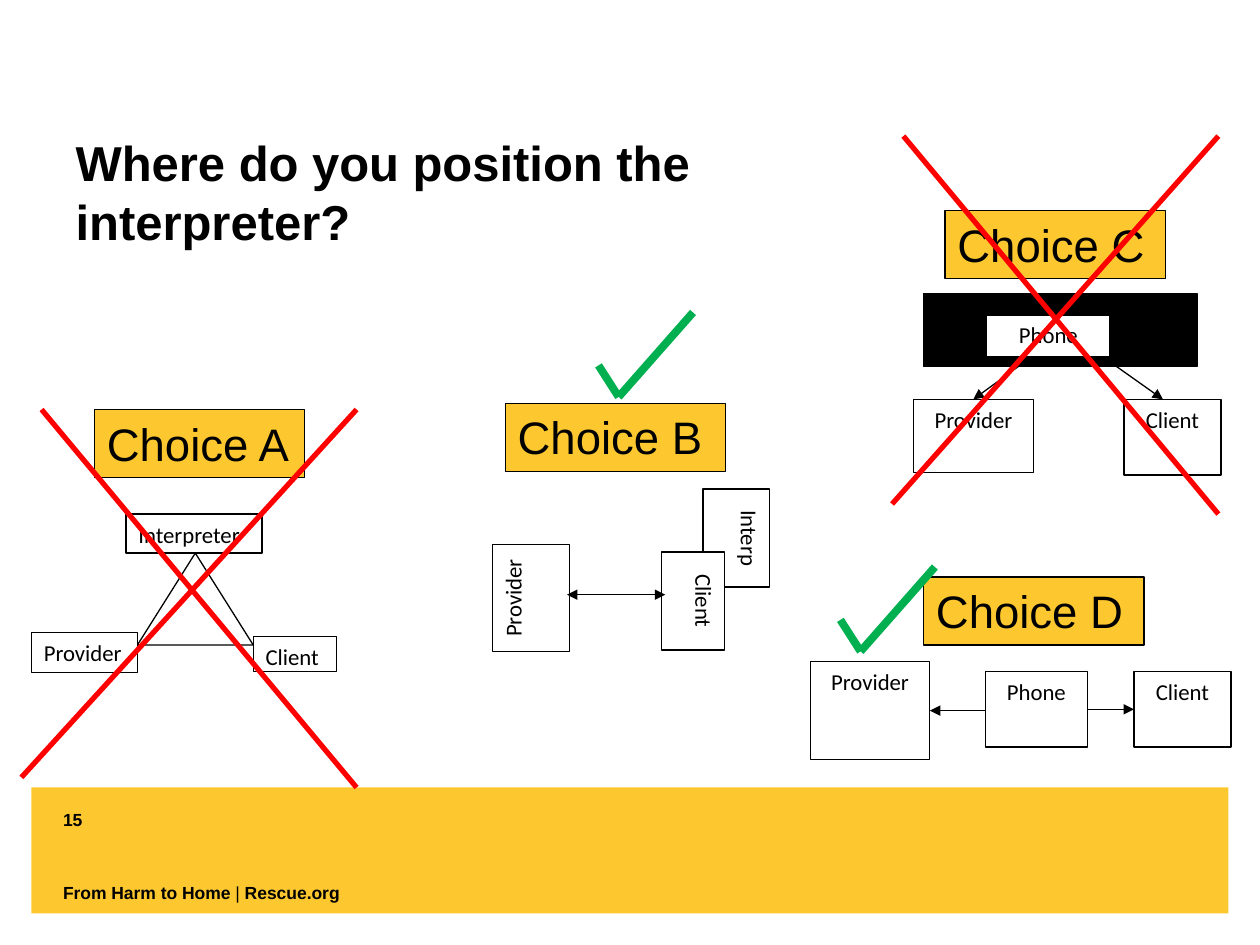
from dataclasses import dataclass
from typing import Optional

from lxml import etree
from pptx import Presentation
from pptx.dml import color
from pptx.enum import shapes, text
from pptx.oxml import ns
from pptx.util import Inches, Pt


@dataclass(frozen=True)
class Theme:
    black: str = "000000"
    white: str = "FFFFFF"
    gold: str = "FDC82F"
    red: str = "FF0000"
    green: str = "00B050"
    head: str = "Arial"
    body: str = "Calibri"
    title: float = 28
    label: float = 26
    role: float = 13
    foot: float = 10
    thin: float = 0.75
    cross: float = 3
    tick: float = 4.5


@dataclass(frozen=True)
class Box:
    words: str
    x: float
    y: float
    w: float
    h: float
    mid: bool = True
    turn: Optional[str] = None
    fill: str = Theme.white


@dataclass(frozen=True)
class Line:
    x1: float
    y1: float
    x2: float
    y2: float


T = Theme()
SHAPE = shapes.MSO_SHAPE


def rgb(code: str) -> color.RGBColor:
    return color.RGBColor.from_string(code)


def write(frame, *parts: str, size: float, font: str, bold: tuple = (False,),
          align=text.PP_ALIGN.LEFT, anchor=text.MSO_ANCHOR.TOP,
          after: float = 0, inset: tuple = (0.1, 0.05)) -> None:
    frame.word_wrap = True
    frame.auto_size = text.MSO_AUTO_SIZE.NONE
    frame.vertical_anchor = anchor
    frame.margin_left = frame.margin_right = Inches(inset[0])
    frame.margin_top = frame.margin_bottom = Inches(inset[1])
    para = frame.paragraphs[0]
    para.alignment = align
    para.space_before = Pt(0)
    para.space_after = Pt(after)
    for part, heavy in zip(parts, bold):
        run = para.add_run()
        run.text = part
        run.font.name = font
        run.font.size = Pt(size)
        run.font.bold = heavy
        run.font.color.rgb = rgb(T.black)


def block(slide, kind, box: Box, edge: bool = True):
    shape = slide.shapes.add_shape(
        kind, Inches(box.x), Inches(box.y), Inches(box.w), Inches(box.h))
    shape.shadow.inherit = False
    shape.fill.solid()
    shape.fill.fore_color.rgb = rgb(box.fill)
    if edge:
        shape.line.color.rgb = rgb(T.black)
        shape.line.width = Pt(T.thin)
    else:
        shape.line.fill.background()
    return shape


def role(slide, box: Box):
    shape = block(slide, SHAPE.RECTANGLE, box)
    align = text.PP_ALIGN.CENTER if box.mid else text.PP_ALIGN.LEFT
    write(shape.text_frame, box.words, size=T.role, font=T.body, align=align, after=10)
    if box.turn:
        shape.element.txBody.bodyPr.set("vert", box.turn)
    return shape


def label(slide, name: str, x: float, y: float, w: float = 1.75) -> None:
    shape = block(slide, SHAPE.RECTANGLE, Box(name, x, y, w, 0.54, fill=T.gold))
    write(shape.text_frame, name, size=T.label, font=T.head)


def stroke(slide, line: Line, ink: str, width: float, tips: bool = False):
    link = slide.shapes.add_connector(
        shapes.MSO_CONNECTOR.STRAIGHT, Inches(line.x1), Inches(line.y1),
        Inches(line.x2), Inches(line.y2))
    link.line.color.rgb = rgb(ink)
    link.line.width = Pt(width)
    props = link.element.spPr
    if tips:
        for end in ("a:headEnd", "a:tailEnd"):
            etree.SubElement(props.find(ns.qn("a:ln")), ns.qn(end), type="triangle")
    etree.SubElement(props, ns.qn("a:effectLst"))
    return link


def arrow(slide, line: Line):
    return stroke(slide, line, T.black, T.thin, tips=True)


def cross(slide, down: Line, up: Line) -> None:
    for line in (down, up):
        stroke(slide, line, T.red, T.cross)


def tick(slide, x: float, y: float) -> None:
    stroke(slide, Line(x - 0.16, y - 0.25, x, y), T.green, T.tick)
    stroke(slide, Line(x, y, x + 0.59, y - 0.67), T.green, T.tick)


def note(slide, y: float, *parts: str, **form) -> None:
    area = slide.shapes.add_textbox(Inches(0.5), Inches(y), Inches(3.25), Inches(0.17))
    write(area.text_frame, *parts, size=T.foot, font=T.head, inset=(0, 0), **form)


def frame(slide) -> None:
    block(slide, SHAPE.RECTANGLE, Box("", 0.25, 6.25, 9.5, 1, fill=T.gold), edge=False)
    note(slide, 6.42, "15", bold=(True,))
    note(slide, 7, "From Harm to Home ", "|", " Rescue.org",
         bold=(True, False, True), anchor=text.MSO_ANCHOR.BOTTOM)
    title = slide.shapes.title
    title.left, title.top = Inches(0.5), Inches(1)
    title.width, title.height = Inches(6.25), Inches(1.5)
    write(title.text_frame, "Where do you position the interpreter?",
          size=T.title, font=T.head, bold=(True,))


def draw_a(slide) -> None:
    block(slide, SHAPE.ISOSCELES_TRIANGLE, Box("", 1.09, 4.39, 0.92, 0.73))
    for box in (Box("Interpreter", 1, 4.08, 1.08, 0.31, mid=False),
                Box("Client", 2.01, 5.05, 0.66, 0.28, mid=False),
                Box("Provider", 0.25, 5.02, 0.84, 0.32, mid=False)):
        role(slide, box)
    label(slide, "Choice A", 0.75, 3.25, 1.67)
    cross(slide, Line(0.33, 3.25, 2.83, 6.25), Line(0.17, 6.17, 2.83, 3.25))


def draw_b(slide) -> None:
    for box in (Box("Interp", 5.58, 3.88, 0.53, 0.78, turn="vert"),
                Box("Client", 5.25, 4.38, 0.5, 0.78, turn="vert"),
                Box("Provider", 3.91, 4.32, 0.61, 0.85, turn="vert270")):
        role(slide, box)
    arrow(slide, Line(4.5, 4.72, 5.28, 4.72))
    label(slide, "Choice B", 4.01, 3.2)
    tick(slide, 4.91, 3.15)


def draw_c(slide) -> None:
    block(slide, SHAPE.RECTANGLE, Box("", 7.33, 2.33, 2.17, 0.58, fill=T.black))
    host = role(slide, Box("Provider", 7.25, 3.17, 0.95, 0.58))
    role(slide, Box("Client", 8.92, 3.17, 0.77, 0.6))
    role(slide, Box("Phone", 7.83, 2.5, 0.98, 0.33))
    arrow(slide, Line(8.75, 2.83, 9.23, 3.17))
    arrow(slide, Line(8.19, 2.83, 7.72, 3.17)).end_connect(host, 0)
    label(slide, "Choice C", 7.5, 1.67)
    cross(slide, Line(7.17, 1.08, 9.67, 4.08), Line(7.08, 4, 9.67, 1.08))


def draw_d(slide) -> None:
    host = role(slide, Box("Provider", 6.43, 5.25, 0.95, 0.78))
    guest = role(slide, Box("Client", 9, 5.33, 0.77, 0.6))
    arrow(slide, Line(7.38, 5.64, 8.22, 5.64)).begin_connect(host, 3)
    arrow(slide, Line(8.19, 5.63, 9, 5.63)).end_connect(guest, 1)
    role(slide, Box("Phone", 7.82, 5.33, 0.81, 0.6))
    label(slide, "Choice D", 7.33, 4.58)
    tick(slide, 6.83, 5.17)


def main() -> None:
    deck = Presentation()
    deck.slide_width, deck.slide_height = Inches(10), Inches(7.5)
    slide = deck.slides.add_slide(deck.slide_layouts[5])
    for draw in (frame, draw_a, draw_b, draw_c, draw_d):
        draw(slide)
    deck.save("out.pptx")


if __name__ == "__main__":
    main()
